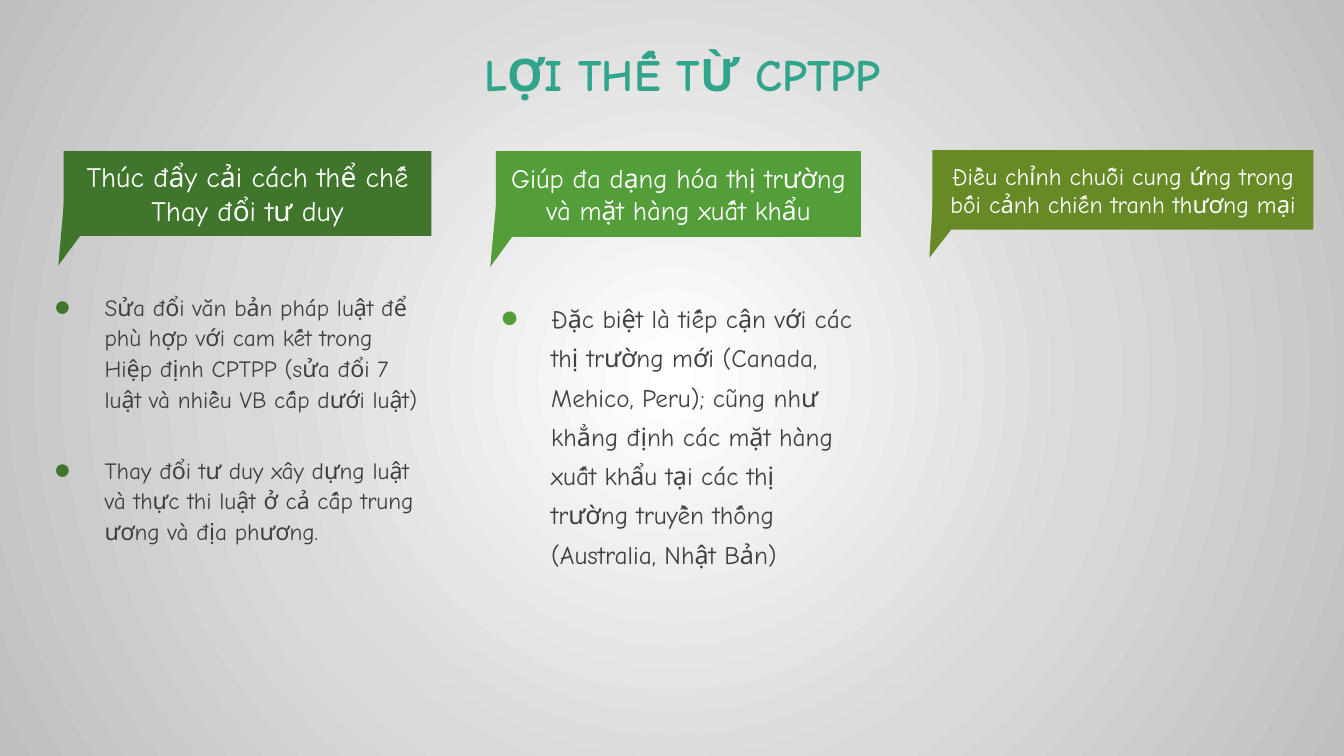
from lxml import etree
from pptx import Presentation
from pptx.dml.color import RGBColor
from pptx.enum.shapes import MSO_SHAPE
from pptx.enum.text import MSO_ANCHOR, PP_ALIGN
from pptx.oxml.ns import qn
from pptx.util import Inches, Pt

RECT, TRIANGLE = MSO_SHAPE.RECTANGLE, MSO_SHAPE.ISOSCELES_TRIANGLE
LEFT, CENTER = PP_ALIGN.LEFT, PP_ALIGN.CENTER
TOP, MIDDLE = MSO_ANCHOR.TOP, MSO_ANCHOR.MIDDLE
FONT = "Comic Neue"
TITLE, BODY, WHITE = "31A58C", "404040", "FFFFFF"

COLUMNS = [
    dict(color="3F762B", box=(4.73, 20, 27.38, 11.2), size=20,
         heading=["Thúc đẩy cải cách thể chế", "Thay đổi tư duy"],
         body=dict(box=(3.3, 37.73, 28.8, 42.27), size=16.6, spacing=1.1, items=[
             "Sửa đổi văn bản pháp luật để phù hợp với cam kết trong Hiệp định CPTPP "
             "(sửa đổi 7 luật và nhiều VB cấp dưới luật)",
             "Thay đổi tư duy xây dựng luật và thực thi luật ở cả cấp trung ương "
             "và địa phương."])),
    dict(color="549E39", box=(36.9, 20, 27.15, 11.33), size=19,
         heading=["Giúp đa dạng hóa thị trường và mặt hàng xuất khẩu"],
         body=dict(box=(36.53, 38.27, 27.9, 56.4), size=18, spacing=1.3, items=[
             "Đặc biệt là tiếp cận với các thị trường mới (Canada, Mehico, Peru); "
             "cũng như khẳng định các mặt hàng xuất khẩu tại các thị trường "
             "truyền thống (Australia, Nhật Bản)"])),
    dict(color="678A26", box=(69.38, 19.87, 28.35, 10.53), size=17,
         heading=["Điều chỉnh chuỗi cung ứng trong bối cảnh chiến tranh thương mại"],
         body=None),
]


def rgb(value):
    return RGBColor.from_string(value)


def add_xml(parent, tag, **attrs):
    return etree.SubElement(parent, qn(tag), attrs)


def write(tf, lines, size, color, bold=False, align=LEFT, anchor=TOP):
    tf.word_wrap = True
    tf.vertical_anchor = anchor
    for i, text in enumerate(lines):
        p = tf.add_paragraph() if i else tf.paragraphs[0]
        p.alignment = align
        r = p.add_run()
        r.text = text
        r.font.name, r.font.size, r.font.bold = FONT, Pt(size), bold
        r.font.color.rgb = rgb(color)


class Deck:
    def __init__(self):
        self.prs = Presentation()
        self.prs.slide_width, self.prs.slide_height = Inches(13.33), Inches(7.5)
        self.s = self.prs.slides.add_slide(self.prs.slide_layouts[6])

    def place(self, x, y, w, h):
        col, row = self.prs.slide_width / 100, self.prs.slide_height / 100
        return [round(v) for v in (x * col, y * row, w * col, h * row)]

    def background(self, stops):
        fill = self.s.background.fill
        fill.gradient()
        grad = self.s.background._cSld.find(".//" + qn("a:gradFill"))
        for child in list(grad):
            grad.remove(child)
        stop_list = add_xml(grad, "a:gsLst")
        for share, color in stops:
            stop = add_xml(stop_list, "a:gs", pos=str(share * 1000))
            add_xml(stop, "a:srgbClr", val=color)
        circle = add_xml(grad, "a:path", path="circle")
        add_xml(circle, "a:fillToRect", l="50000", t="50000", r="50000", b="50000")

    def shape(self, group, kind, box, color, rotation=0):
        sp = group.shapes.add_shape(kind, *self.place(*box))
        sp.shadow.inherit = False
        sp.fill.solid()
        sp.fill.fore_color.rgb = rgb(color)
        sp.line.fill.background()
        sp.rotation = rotation
        return sp

    def text(self, box, lines, **style):
        tf = self.s.shapes.add_textbox(*self.place(*box)).text_frame
        write(tf, lines, **style)
        return tf

    def callout(self, box, lines, size, color):
        x, y, w, h = box
        group = self.s.shapes.add_group_shape()
        tail = (x - 1.2, y + 0.15 * h, 0.16 * w, 1.24 * h)
        self.shape(group, TRIANGLE, tail, color, rotation=200.7)
        sp = self.shape(group, RECT, box, color)
        write(sp.text_frame, lines, size, WHITE, align=CENTER, anchor=MIDDLE)

    def bullets(self, box, items, size, spacing, color):
        tf = self.text(box, items, size=size, color=BODY)
        indent = Inches(0.5)
        for i, p in enumerate(tf.paragraphs):
            p.line_spacing = spacing
            p.space_before = Pt(28.8 if i else 0.2 * size)
            pPr = p._p.get_or_add_pPr()
            pPr.set("marL", str(indent))
            pPr.set("indent", str(-indent))
            add_xml(add_xml(pPr, "a:buClr"), "a:srgbClr", val=color)
            add_xml(pPr, "a:buSzPct", val="200000")
            add_xml(pPr, "a:buFont", typeface="Arial")
            add_xml(pPr, "a:buChar", char="•")


def main():
    deck = Deck()
    deck.background([(0, "FFFFFF"), (55, "D9D9D9"), (100, "BFBFBF")])
    for column in COLUMNS:
        color = column["color"]
        if column["body"]:
            deck.bullets(color=color, **column["body"])
        deck.callout(column["box"], column["heading"], column["size"], color)
    deck.text((5.33, 5.47, 90.9, 8.53), ["LỢI THẾ TỪ CPTPP"],
              size=32, color=TITLE, bold=True, align=CENTER)
    deck.prs.save("out.pptx")


if __name__ == "__main__":
    main()
